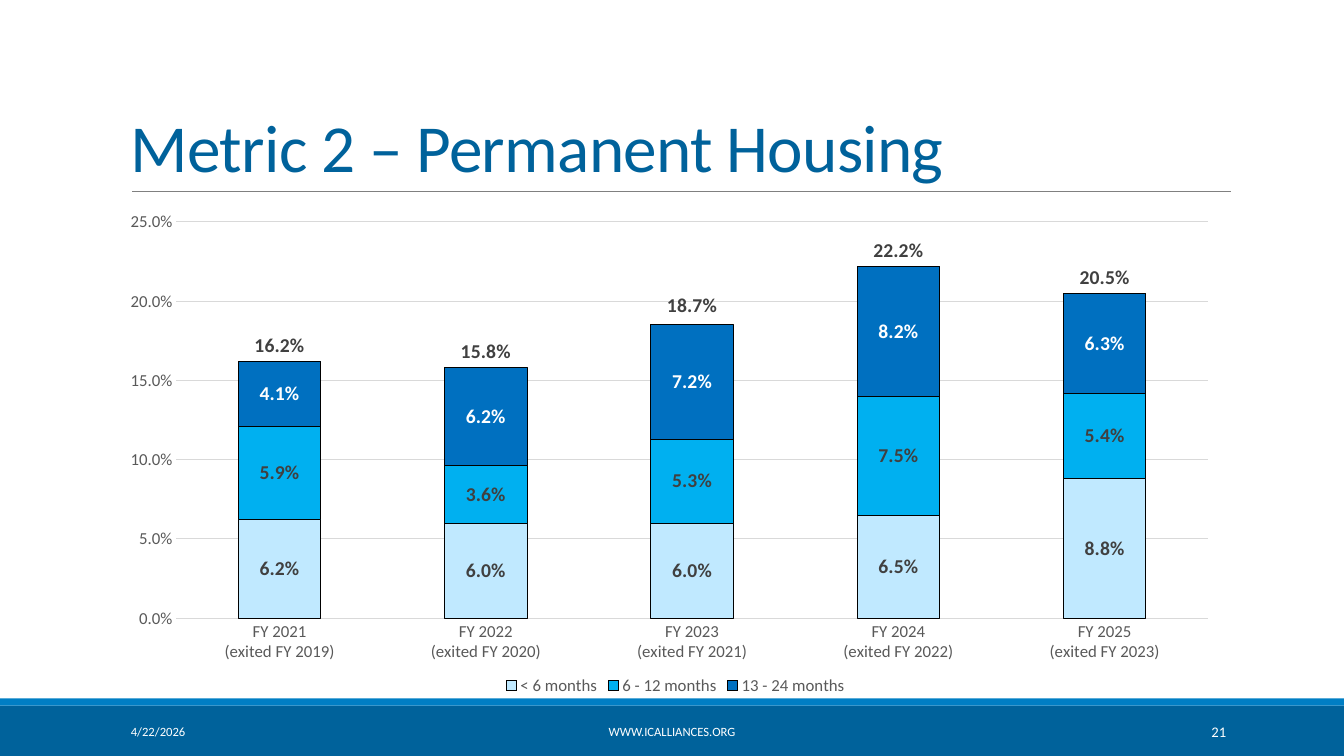
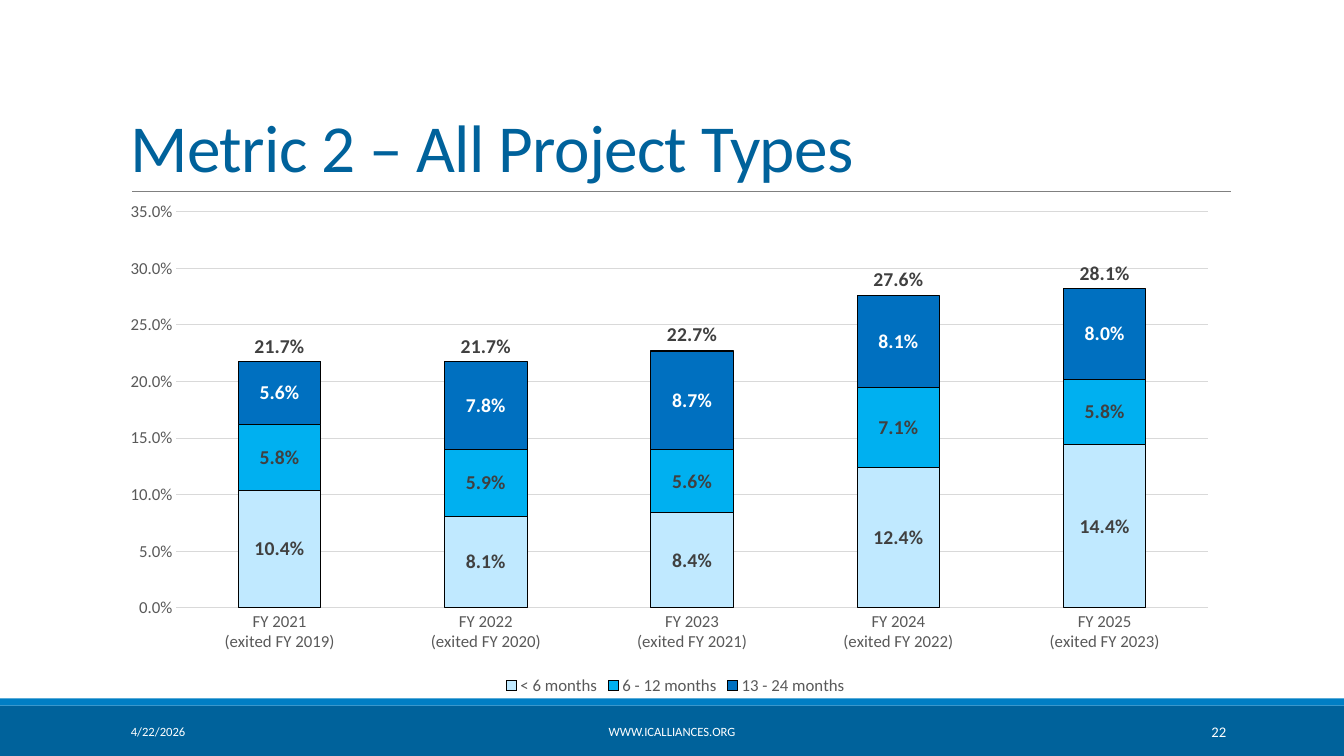
from lxml import etree
from pptx import Presentation
from pptx.chart.data import CategoryChartData
from pptx.dml.color import RGBColor
from pptx.enum.chart import (XL_CHART_TYPE, XL_LABEL_POSITION, XL_LEGEND_POSITION,
                             XL_MARKER_STYLE, XL_TICK_MARK)
from pptx.enum.shapes import MSO_CONNECTOR, MSO_SHAPE
from pptx.enum.text import MSO_ANCHOR, PP_ALIGN
from pptx.oxml import parse_xml
from pptx.oxml.ns import nsdecls, qn
from pptx.util import Inches, Pt

STACK = XL_CHART_TYPE.COLUMN_STACKED
ABOVE = XL_LABEL_POSITION.ABOVE
FOOT = XL_LEGEND_POSITION.BOTTOM
BARE = XL_MARKER_STYLE.NONE
FLAT = XL_TICK_MARK.NONE
LINE, RECT = MSO_CONNECTOR.STRAIGHT, MSO_SHAPE.RECTANGLE
LOW, MID = MSO_ANCHOR.BOTTOM, MSO_ANCHOR.MIDDLE
LEFT, CENTER, RIGHT = PP_ALIGN.LEFT, PP_ALIGN.CENTER, PP_ALIGN.RIGHT

FACE = "Calibri"
NAVY, BLUE, WHITE, BLACK = "00629B", "007EC4", "FFFFFF", "000000"
RULE, GRID, GREY, DARK = "808080", "D9D9D9", "595959", "404040"
RATE = "0.0%"

BANDS = [((0, 7, 13.33, 0.5), NAVY), ((0, 6.93, 13.33, 0.07), BLUE)]
TITLE = (1.2, 0.31, 11, 1.59)
CHART = (1.2, 1.9, 11, 5.04)
FOOTER = [
    ((1.2, 7.06, 2.7, 0.4), "4/22/2026", 9, LEFT),
    ((4.03, 7.06, 5.27, 0.4), "WWW.ICALLIANCES.ORG", 9, CENTER),
    ((10.83, 7.06, 1.43, 0.4), "{page}", 10.5, RIGHT),
]
YEARS = range(2021, 2026)
STYLES = [
    ("< 6 months", "C0E9FF", DARK),
    ("6 - 12 months", "00B0F0", DARK),
    ("13 - 24 months", "0070C0", WHITE),
]
TOTAL = "Series 4"
SLIDES = [
    {
        "page": 21, "title": "Metric 2 – Permanent Housing",
        "top": 0.25, "plot": (0.05, 0.06, 0.93, 0.78),
        "parts": [
            (0.062, 0.06, 0.06, 0.065, 0.088),
            (0.059, 0.036, 0.053, 0.075, 0.054),
            (0.041, 0.062, 0.072, 0.082, 0.063),
        ],
        "total": (0.162, 0.158, 0.187, 0.222, 0.205),
    },
    {
        "page": 22, "title": "Metric 2 – All Project Types",
        "top": 0.35, "plot": (0.05, 0.04, 0.93, 0.78),
        "parts": [
            (0.104, 0.081, 0.084, 0.124, 0.144),
            (0.058, 0.059, 0.056, 0.071, 0.058),
            (0.056, 0.078, 0.087, 0.081, 0.08),
        ],
        "total": (0.217, 0.217, 0.227, 0.276, 0.281),
    },
]


def color(code):
    return RGBColor.from_string(code)


def assign(item, values):
    for name, value in values.items():
        setattr(item, name, value)


def fill(item, code):
    item.fill.solid()
    item.fill.fore_color.rgb = color(code)


def stroke(line, code, width):
    line.color.rgb = color(code)
    line.width = Pt(width)


def style(font, size, code, bold=False):
    assign(font, {"name": FACE, "size": Pt(size), "bold": bold})
    font.color.rgb = color(code)


def inches(box):
    return [Inches(part) for part in box]


def write(slide, box, text, size, code, align=LEFT, anchor=MID):
    frame = slide.shapes.add_textbox(*inches(box)).text_frame
    assign(frame, {"word_wrap": True, "vertical_anchor": anchor})
    para = frame.paragraphs[0]
    para.alignment = align
    run = para.add_run()
    run.text = text
    style(run.font, size, code)
    return para


def frame(slide, title, page):
    for box, code in BANDS:
        band = slide.shapes.add_shape(RECT, *inches(box))
        band.shadow.inherit = False
        fill(band, code)
        band.line.fill.background()
    rule = slide.shapes.add_connector(LINE, *inches((1.31, 1.9, 12.21, 1.9)))
    stroke(rule.line, RULE, 0.5)
    etree.SubElement(rule._element.spPr, qn("a:effectLst"))
    head = write(slide, TITLE, title, 48, NAVY, anchor=LOW)
    head.line_spacing = 0.85
    head.runs[0].font._element.set("spc", "-50")
    for box, text, size, align in FOOTER:
        write(slide, box, text.format(page=page), size, WHITE, align)


def label(series, code, place=None):
    labels = series.data_labels
    assign(labels, {"show_value": True, "number_format": RATE,
                    "number_format_is_linked": False})
    if place is not None:
        labels.position = place
    style(labels.font, 14, code, True)


def split(chart):
    bars = chart.plots[0]._element
    last = chart.plots[0].series[len(STYLES)]._element
    for flag in last.findall(qn("c:invertIfNegative")):
        last.remove(flag)
    axes = "".join(f'<c:axId val="{axis.get("val")}"/>'
                   for axis in bars.findall(qn("c:axId")))
    lines = parse_xml(f'<c:lineChart {nsdecls("c")}><c:grouping val="standard"/>'
                      f'<c:varyColors val="0"/><c:marker val="1"/>{axes}</c:lineChart>')
    lines.insert(2, last)
    bars.addnext(lines)


def place(chart, box):
    area = chart.plots[0]._element.getparent()
    for old in area.findall(qn("c:layout")):
        area.remove(old)
    spots = "".join(f'<c:{tag} val="{part}"/>' for tag, part in zip("xywh", box))
    area.insert(0, parse_xml(
        f'<c:layout {nsdecls("c")}><c:manualLayout><c:layoutTarget val="inner"/>'
        f'<c:xMode val="edge"/><c:yMode val="edge"/>{spots}'
        '</c:manualLayout></c:layout>'))


def key(chart):
    chart.has_legend = True
    legend = chart.legend
    assign(legend, {"position": FOOT, "include_in_layout": False})
    style(legend.font, 12, GREY)
    legend._element.find(qn("c:legendPos")).addnext(parse_xml(
        f'<c:legendEntry {nsdecls("c")}><c:idx val="{len(STYLES)}"/>'
        '<c:delete val="1"/></c:legendEntry>'))


def scale(chart, top):
    for axis in (chart.category_axis, chart.value_axis):
        assign(axis, {"major_tick_mark": FLAT, "minor_tick_mark": FLAT})
        style(axis.tick_labels.font, 12, GREY)
    stroke(chart.category_axis.format.line, GRID, 0.75)
    value = chart.value_axis
    assign(value, {"minimum_scale": 0, "maximum_scale": top, "major_unit": 0.05,
                   "has_major_gridlines": True})
    value.format.line.fill.background()
    stroke(value.major_gridlines.format.line, GRID, 0.75)
    assign(value.tick_labels, {"number_format": RATE, "number_format_is_linked": False})


def draw(slide, item):
    data = CategoryChartData(number_format=RATE)
    data.categories = [f"FY {year}\n(exited FY {year - 2})" for year in YEARS]
    for (name, _, _), values in zip(STYLES, item["parts"]):
        data.add_series(name, values)
    data.add_series(TOTAL, item["total"])
    chart = slide.shapes.add_chart(STACK, *inches(CHART), data).chart
    chart.has_title = False
    style(chart.font, 10, BLACK)
    split(chart)
    bars, lines = chart.plots
    assign(bars, {"gap_width": 150, "overlap": 100, "vary_by_categories": False})
    for series, (_, code, ink) in zip(bars.series, STYLES):
        fill(series.format, code)
        stroke(series.format.line, BLACK, 0.75)
        label(series, ink)
    total = lines.series[0]
    total.smooth = False
    total.format.line.fill.background()
    total.marker.style = BARE
    label(total, DARK, ABOVE)
    scale(chart, item["top"])
    key(chart)
    place(chart, item["plot"])


def main():
    deck = Presentation()
    assign(deck, {"slide_width": Inches(13.33), "slide_height": Inches(7.5)})
    for item in SLIDES:
        slide = deck.slides.add_slide(deck.slide_layouts[6])
        frame(slide, item["title"], item["page"])
        draw(slide, item)
    deck.save("out.pptx")


if __name__ == "__main__":
    main()
